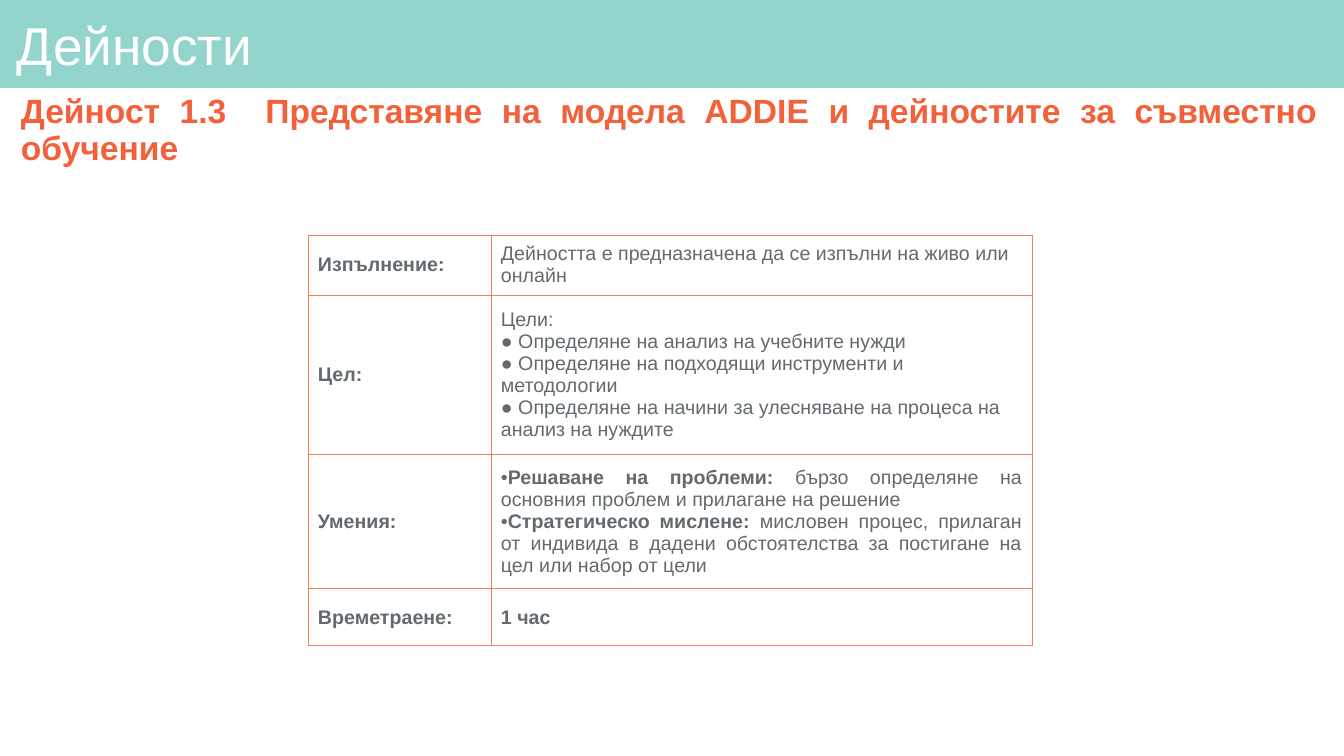
from dataclasses import dataclass

from lxml.etree import SubElement
from pptx import Presentation
from pptx.dml.color import RGBColor
from pptx.enum.shapes import MSO_SHAPE
from pptx.enum.text import MSO_ANCHOR, PP_ALIGN
from pptx.oxml import parse_xml
from pptx.oxml.ns import nsdecls, qn
from pptx.util import Emu, Pt

EMU_PER_PX = 914400 / 100.8
FONT = "Arial"
TEAL, ORANGE, BORDER, GREY, WHITE = "93D4CC", "F2613A", "F47F5D", "636A6F", "FFFFFF"
COLUMN_WIDTHS = (183, 541)


@dataclass(frozen=True)
class Line:
    """A paragraph with a bold lead, a plain rest and an optional bullet."""
    lead: str = ""
    rest: str = ""
    bullet: str = ""


@dataclass(frozen=True)
class Detail:
    """A table row: its height, label and content."""
    height: int
    label: str
    lines: tuple[Line, ...]


@dataclass(frozen=True)
class Heading:
    """A line of heading text and its frame."""
    text: str
    top: int
    height: int
    size: int
    color: str
    inset: tuple[int, int]
    bold: bool = False
    align: PP_ALIGN = PP_ALIGN.LEFT


HEADINGS = (
    Heading("Дейности", 9, 79, 38, WHITE, (6, 6)),
    Heading("Дейност 1.3  Представяне на модела ADDIE и дейностите за съвместно обучение",
            101, 60, 24, ORANGE, (10, 5), True, PP_ALIGN.JUSTIFY),
)

DETAILS = (
    Detail(60, "Изпълнение:", (
        Line(rest="Дейността е предназначена да се изпълни на живо или онлайн"),)),
    Detail(159, "Цел:", (
        Line(rest="Цели:"),
        Line(rest="● Определяне на анализ на учебните нужди"),
        Line(rest="● Определяне на подходящи инструменти и методологии"),
        Line(rest="● Определяне на начини за улесняване на процеса на анализ на нуждите"))),
    Detail(135, "Умения:", (
        Line("Решаване на проблеми:",
             " бързо определяне на основния проблем и прилагане на решение", "•"),
        Line("Стратегическо мислене:",
             " мисловен процес, прилаган от индивида в дадени обстоятелства"
             " за постигане на цел или набор от цели", "•"))),
    Detail(57, "Времетраене:", (Line("1 час"),)),
)


def px(length: float) -> Emu:
    """Turn px into EMU."""
    return Emu(round(length * EMU_PER_PX))


def rgb(color: str) -> RGBColor:
    """Turn a hex string into a colour."""
    return RGBColor.from_string(color)


def style(font, size: int, color: str) -> None:
    """Set typeface, size and colour."""
    font.name, font.size = FONT, Pt(size)
    font.color.rgb = rgb(color)


def add_banner(slide) -> None:
    """Draw the band behind the title."""
    banner = slide.shapes.add_shape(MSO_SHAPE.RECTANGLE, 0, 0, px(1344), px(88))
    banner.shadow.inherit = False
    banner.fill.solid()
    banner.fill.fore_color.rgb = rgb(TEAL)
    banner.line.fill.background()


def add_heading(slide, heading: Heading) -> None:
    """Write one heading."""
    box = slide.shapes.add_textbox(px(11), px(heading.top), px(1316), px(heading.height))
    frame = box.text_frame
    frame.word_wrap = True
    frame.vertical_anchor = MSO_ANCHOR.MIDDLE
    frame.margin_left = frame.margin_right = px(heading.inset[0])
    frame.margin_top = frame.margin_bottom = px(heading.inset[1])
    paragraph = frame.paragraphs[0]
    paragraph.text = heading.text
    paragraph.alignment = heading.align
    paragraph.line_spacing = 0.9
    style(paragraph.font, heading.size, heading.color)
    paragraph.font.bold = heading.bold


def set_bullet(paragraph, bullet: str) -> None:
    """Give a justified paragraph a flush bullet."""
    paragraph.alignment = PP_ALIGN.JUSTIFY
    properties = paragraph._p.get_or_add_pPr()
    properties.set("marL", "0")
    properties.set("indent", "0")
    SubElement(properties, qn("a:buFont")).set("typeface", FONT)
    SubElement(properties, qn("a:buChar")).set("char", bullet)


def fill_cell(cell, lines: tuple[Line, ...]) -> None:
    """Write the lines of a cell and draw its borders."""
    cell.vertical_anchor = MSO_ANCHOR.MIDDLE
    cell.margin_left = cell.margin_right = px(10)
    cell.margin_top = cell.margin_bottom = px(5)
    cell.fill.background()
    for index, side in enumerate(("lnL", "lnR", "lnT", "lnB")):
        border = parse_xml(
            f'<a:{side} {nsdecls("a")} w="{Pt(0.75)}"><a:solidFill>'
            f'<a:srgbClr val="{BORDER}"/></a:solidFill></a:{side}>')
        cell._tc.get_or_add_tcPr().insert(index, border)
    frame = cell.text_frame
    for index, line in enumerate(lines):
        paragraph = frame.add_paragraph() if index else frame.paragraphs[0]
        if line.bullet:
            set_bullet(paragraph, line.bullet)
        style(paragraph.font, 14, GREY)
        parts = [(text, bold) for text, bold in ((line.lead, True), (line.rest, False)) if text]
        if len(parts) == 1:
            paragraph.font.bold = parts[0][1]
        for text, bold in parts:
            run = paragraph.add_run()
            run.text = text
            if len(parts) > 1:
                run.font.bold = bold


def add_details(slide) -> None:
    """Build the table of activity details."""
    height = sum(detail.height for detail in DETAILS)
    table = slide.shapes.add_table(
        len(DETAILS), len(COLUMN_WIDTHS), px(308), px(235),
        px(sum(COLUMN_WIDTHS)), px(height)).table
    table.first_row = table.horz_banding = False
    for column, width in zip(table.columns, COLUMN_WIDTHS):
        column.width = px(width)
    for row, detail in zip(table.rows, DETAILS):
        row.height = px(detail.height)
        for cell, lines in zip(row.cells, ((Line(detail.label),), detail.lines)):
            fill_cell(cell, lines)


def main() -> None:
    """Build and save the slide."""
    deck = Presentation()
    deck.slide_width, deck.slide_height = px(1344), px(756)
    slide = deck.slides.add_slide(deck.slide_layouts[6])
    add_banner(slide)
    for heading in HEADINGS:
        add_heading(slide, heading)
    add_details(slide)
    deck.save("out.pptx")


if __name__ == "__main__":
    main()
